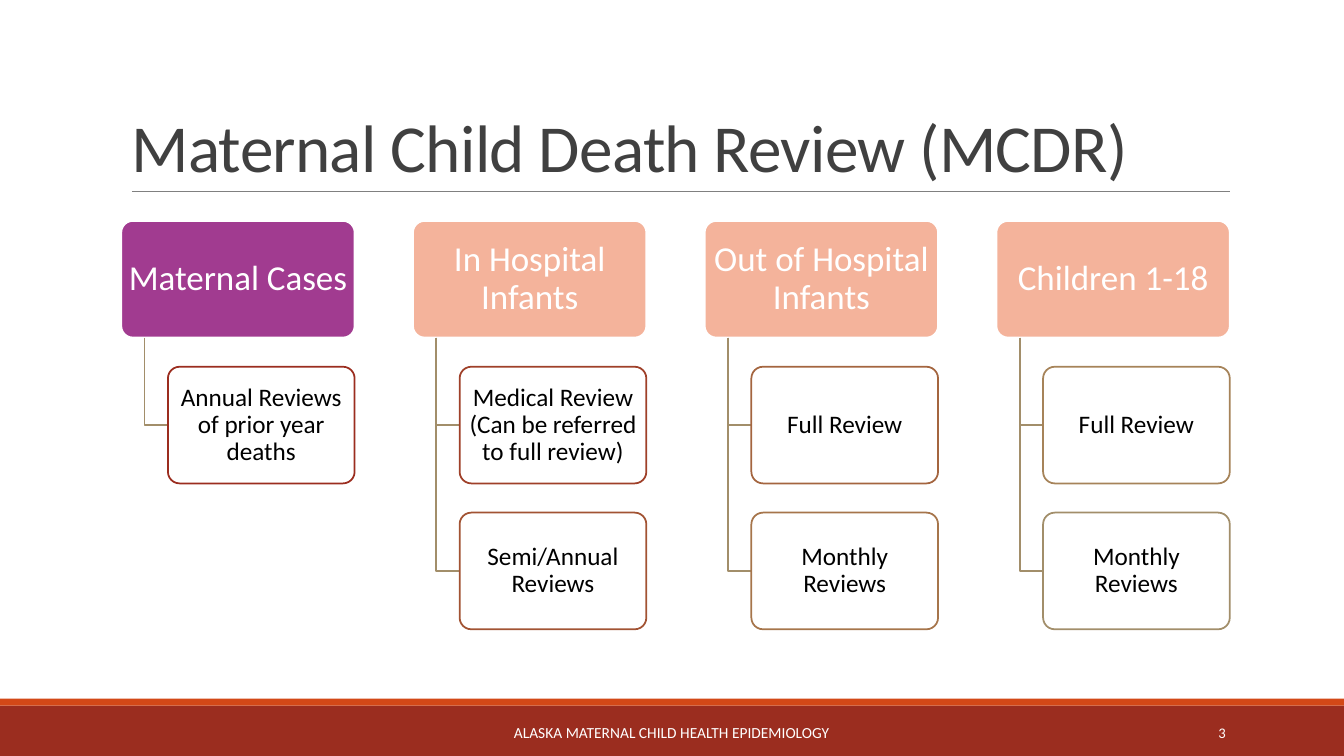
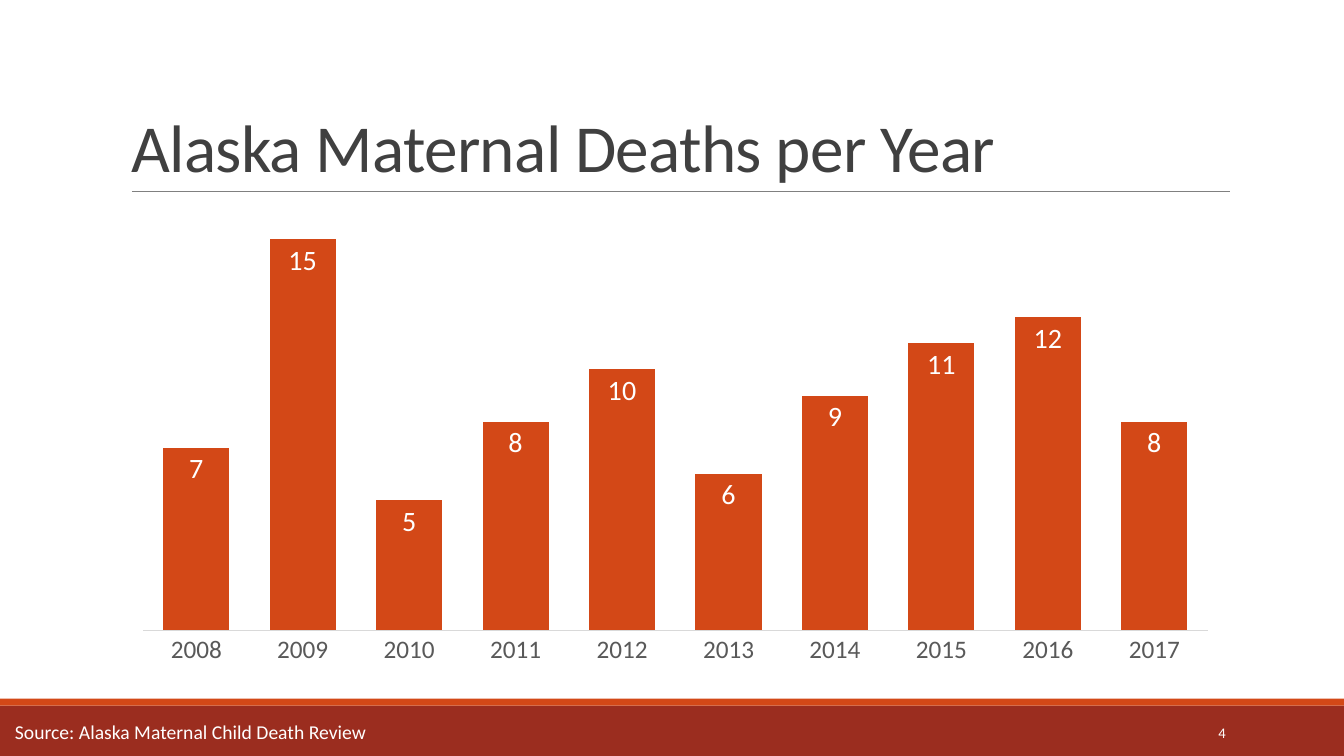
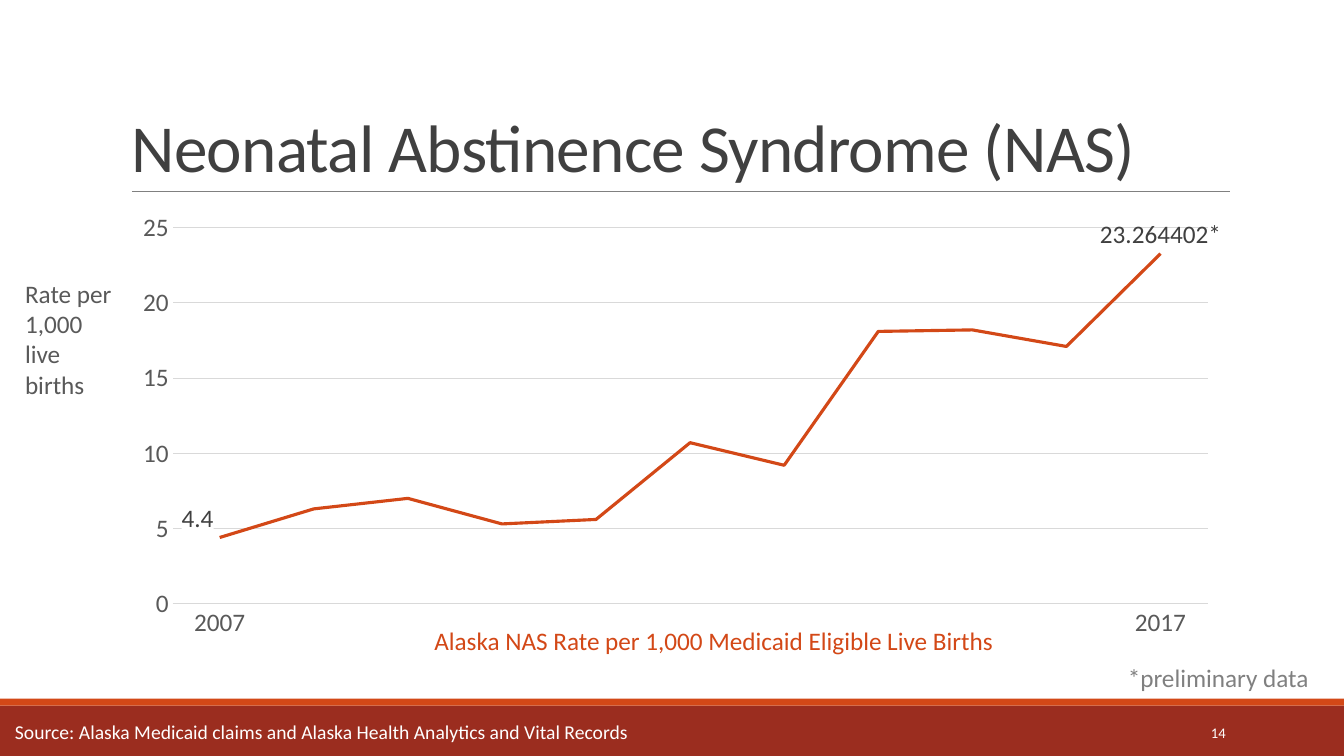
from lxml import etree
from pptx import Presentation
from pptx.chart.data import CategoryChartData
from pptx.dml.color import RGBColor
from pptx.enum.chart import XL_CHART_TYPE, XL_LABEL_POSITION, XL_MARKER_STYLE, XL_TICK_MARK
from pptx.enum.shapes import MSO_CONNECTOR, MSO_SHAPE
from pptx.enum.text import MSO_ANCHOR, PP_ALIGN
from pptx.oxml import parse_xml
from pptx.oxml.ns import nsdecls, qn
from pptx.util import Pt

FONT = "Calibri"
WHITE = RGBColor(0xFF, 0xFF, 0xFF)
BLACK = RGBColor(0, 0, 0)
BRICK = RGBColor(0x9B, 0x2D, 0x1F)
ORANGE = RGBColor(0xD3, 0x48, 0x17)
PURPLE = RGBColor(0xA1, 0x3B, 0x90)
PEACH = RGBColor(0xF4, 0xB3, 0x9B)
TAN = RGBColor(0xA2, 0x8E, 0x6A)
RUST = RGBColor(0x9F, 0x40, 0x29)
SIENNA = RGBColor(0xA2, 0x53, 0x33)
COPPER = RGBColor(0xA4, 0x65, 0x3F)
BRONZE = RGBColor(0xA6, 0x75, 0x4B)
OCHRE = RGBColor(0xA6, 0x83, 0x59)
CHARCOAL = RGBColor(0x40, 0x40, 0x40)
SLATE = RGBColor(0x59, 0x59, 0x59)
GREY = RGBColor(0x80, 0x80, 0x80)
PALE = RGBColor(0xD9, 0xD9, 0xD9)

RECT, ROUNDED = MSO_SHAPE.RECTANGLE, MSO_SHAPE.ROUNDED_RECTANGLE
STRAIGHT = MSO_CONNECTOR.STRAIGHT
LEFT, CENTER, RIGHT = PP_ALIGN.LEFT, PP_ALIGN.CENTER, PP_ALIGN.RIGHT
TOP, MIDDLE, BOTTOM = MSO_ANCHOR.TOP, MSO_ANCHOR.MIDDLE, MSO_ANCHOR.BOTTOM
COLUMNS, LINE = XL_CHART_TYPE.COLUMN_CLUSTERED, XL_CHART_TYPE.LINE
INSIDE_END, ABOVE = XL_LABEL_POSITION.INSIDE_END, XL_LABEL_POSITION.ABOVE
NO_TICK, NO_MARKER = XL_TICK_MARK.NONE, XL_MARKER_STYLE.NONE

REVIEWS = [
    ("Maternal Cases", PURPLE, [("Annual Reviews of prior year deaths", BRICK)]),
    ("In Hospital Infants", PEACH, [
        ("Medical Review (Can be referred to full review)", RUST),
        ("Semi/Annual Reviews", SIENNA)]),
    ("Out of Hospital Infants", PEACH, [
        ("Full Review", COPPER), ("Monthly Reviews", BRONZE)]),
    ("Children 1-18", PEACH, [("Full Review", OCHRE), ("Monthly Reviews", TAN)]),
]
DEATHS = [7, 15, 5, 8, 10, 6, 9, 11, 12, 8]
NAS_RATES = [4.4, 6.3, 7.0, 5.3, 5.6, 10.7, 9.2, 18.1, 18.2, 17.1, 23.264402]


def style_font(font, size, color):
    """Set the deck font with a size and colour."""
    font.name = FONT
    font.size = Pt(size)
    font.color.rgb = color


def write(frame, text, size, color, align=LEFT, anchor=TOP, spacing=1.0):
    """Write one paragraph into a text frame and return its run."""
    frame.text = text
    frame.vertical_anchor = anchor
    paragraph = frame.paragraphs[0]
    paragraph.alignment = align
    paragraph.line_spacing = spacing
    run = paragraph.runs[0]
    style_font(run.font, size, color)
    return run


def add_text(slide, box, text, size, color, wrap=True, **layout):
    """Add a text box at (left, top, width, height) and return its run."""
    frame = slide.shapes.add_textbox(*map(Pt, box)).text_frame
    frame.word_wrap = wrap
    return write(frame, text, size, color, **layout)


def add_block(slide, kind, box, fill, outline=None):
    """Add a filled shape, outlined only if a colour is given."""
    block = slide.shapes.add_shape(kind, *map(Pt, box))
    block.shadow.inherit = False
    block.fill.solid()
    block.fill.fore_color.rgb = fill
    if outline is None:
        block.line.fill.background()
    else:
        block.line.color.rgb = outline
        block.line.width = Pt(1.25)
    return block


def add_framed_slide(deck, title, number):
    """Add a slide with the shared bands, title, rule and page number."""
    slide = deck.slides.add_slide(deck.slide_layouts[6])
    add_block(slide, RECT, (0, 504, 960, 36), BRICK)
    add_block(slide, RECT, (0, 499, 960, 5), ORANGE)
    rule = slide.shapes.add_connector(STRAIGHT, Pt(94.3), Pt(136.8), Pt(878.6), Pt(136.8))
    rule.line.color.rgb = GREY
    rule.line.width = Pt(0.5)
    etree.SubElement(rule._element.spPr, qn("a:effectLst"))
    heading = add_text(slide, (86.8, 22.6, 792, 114.2), title, 48, CHARCOAL,
                       anchor=BOTTOM, spacing=0.85)
    heading.font._element.set("spc", "-50")
    add_text(slide, (779.6, 508.8, 103, 28.8), str(number), 10.5, WHITE,
             align=RIGHT, anchor=MIDDLE)
    return slide


def add_source(slide, text, width):
    """Put the data source at the left of the bottom band."""
    add_text(slide, (3.6, 511, width, 24.2), text, 14, WHITE, wrap=False)


def add_card(slide, box, text, size, color, fill, outline):
    """Add a rounded card with centred text."""
    card = add_block(slide, ROUNDED, box, fill, outline)
    card.adjustments[0] = 0.1
    frame = card.text_frame
    frame.word_wrap = True
    frame.margin_left = frame.margin_right = Pt(2.5)
    frame.margin_top = frame.margin_bottom = Pt(2.5)
    write(frame, text, size, color, CENTER, MIDDLE, 0.9)


def add_branch(slide, left, top, right, bottom):
    """Draw an open elbow down and then right."""
    builder = slide.shapes.build_freeform(Pt(left), Pt(top))
    builder.add_line_segments([(Pt(left), Pt(bottom)), (Pt(right), Pt(bottom))], close=False)
    branch = builder.convert_to_shape()
    branch.shadow.inherit = False
    branch.fill.background()
    branch.line.color.rgb = TAN
    branch.line.width = Pt(1.25)


def add_review_column(slide, left, top, width, heading, fill, steps):
    """Add a heading card with its review steps hanging below it."""
    height = width / 2
    add_card(slide, (left, top, width, height), heading, 25, WHITE, fill, WHITE)
    step_left = left + 0.2 * width
    for row, (step, outline) in enumerate(steps, 1):
        step_top = top + 1.25 * height * row
        add_branch(slide, left + 0.1 * width, top + height, step_left, step_top + height / 2)
        add_card(slide, (step_left, step_top, 0.8 * width, height),
                 step, 18, BLACK, WHITE, outline)


def add_plain_chart(slide, box, kind, categories, values, size):
    """Add a one-series chart with a plain category axis."""
    data = CategoryChartData()
    data.categories = categories
    data.add_series("Series 1", values)
    chart = slide.shapes.add_chart(kind, *map(Pt, box), data).chart
    chart.has_title = False
    chart.has_legend = False
    style_font(chart.font, size, BLACK)
    chart.plots[0].vary_by_categories = False
    axis = chart.category_axis
    axis.major_tick_mark = NO_TICK
    axis.format.line.color.rgb = PALE
    axis.format.line.width = Pt(0.75)
    style_font(axis.tick_labels.font, 18, SLATE)
    chart.value_axis.minimum_scale = 0
    return chart


def add_deaths_chart(slide, box):
    """Add the columns of deaths per year."""
    years = [str(year) for year in range(2008, 2018)]
    chart = add_plain_chart(slide, box, COLUMNS, years, DEATHS, 10)
    chart.value_axis.visible = False
    chart.value_axis.has_major_gridlines = False
    chart.value_axis.maximum_scale = 16
    plot = chart.plots[0]
    plot.gap_width = 61
    plot.overlap = -1
    deaths = plot.series[0]
    deaths.format.fill.solid()
    deaths.format.fill.fore_color.rgb = ORANGE
    labels = deaths.data_labels
    labels.show_value = True
    labels.position = INSIDE_END
    style_font(labels.font, 20, WHITE)


def label_ends(rates):
    """Label only the first and last points of the rate line."""
    rates.data_labels.show_value = False
    last = rates.points[len(NAS_RATES) - 1].data_label
    write(last.text_frame, "23.264402*", 18, CHARCOAL, CENTER)
    last.position = ABOVE
    first = rates.points[0].data_label
    style_font(first.font, 18, CHARCOAL)
    first.position = ABOVE
    label = rates.data_labels._element.find(qn("c:dLbl"))
    label.find(qn("c:idx")).addnext(parse_xml(
        f'<c:layout {nsdecls("c")}><c:manualLayout><c:x val="-0.02"/>'
        '<c:y val="0"/></c:manualLayout></c:layout>'))
    for old_fill in label.findall(qn("c:spPr")):
        label.remove(old_fill)
    label.find(qn("c:txPr")).addprevious(parse_xml(
        f'<c:spPr {nsdecls("c", "a")}><a:solidFill><a:srgbClr val="{WHITE}"/>'
        '</a:solidFill></c:spPr>'))


def add_rate_chart(slide, box):
    """Add the line of abstinence syndrome rates."""
    years = ["2007"] + [""] * (len(NAS_RATES) - 2) + ["2017"]
    chart = add_plain_chart(slide, box, LINE, years, NAS_RATES, 18)
    axis = chart.value_axis
    axis.maximum_scale = 25
    axis.major_unit = 5
    axis.major_tick_mark = NO_TICK
    axis.format.line.fill.background()
    axis.major_gridlines.format.line.color.rgb = PALE
    axis.major_gridlines.format.line.width = Pt(0.75)
    axis.tick_labels.number_format = "0"
    axis.tick_labels.number_format_is_linked = False
    style_font(axis.tick_labels.font, 18, SLATE)
    rates = chart.plots[0].series[0]
    rates.smooth = False
    rates.marker.style = NO_MARKER
    rates.format.line.color.rgb = ORANGE
    rates.format.line.width = Pt(2.25)
    label_ends(rates)


def build_review_slide(deck):
    """Build the overview of review groups."""
    slide = add_framed_slide(deck, "Maternal Child Death Review (MCDR)", 3)
    width = 166.7
    for column, review in enumerate(REVIEWS):
        add_review_column(slide, 86.6 + 1.25 * width * column, 157.8, width, *review)
    add_text(slide, (290.2, 508.5, 379.4, 28.8), "ALASKA MATERNAL CHILD HEALTH EPIDEMIOLOGY",
             11, WHITE, align=CENTER, anchor=MIDDLE)


def build_deaths_slide(deck):
    """Build the slide of maternal deaths per year."""
    slide = add_framed_slide(deck, "Alaska Maternal Deaths per Year", 4)
    add_deaths_chart(slide, (86.4, 145.4, 792, 336.2))
    add_source(slide, "Source: Alaska Maternal Child Death Review", 267.8)


def build_rate_slide(deck):
    """Build the slide of neonatal abstinence syndrome rates."""
    slide = add_framed_slide(deck, "Neonatal Abstinence Syndrome (NAS)", 14)
    add_rate_chart(slide, (86.4, 145.4, 792, 316.8))
    add_text(slide, (10.8, 195.1, 82, 94.3), "Rate per 1,000 live births", 18, SLATE)
    add_text(slide, (303.1, 442.8, 418.3, 29), "Alaska NAS Rate per 1,000 Medicaid Eligible Live Births",
             18, ORANGE, wrap=False)
    add_text(slide, (798.5, 469.4, 145.4, 29), "*preliminary data", 18, GREY, wrap=False)
    add_source(slide, "Source: Alaska Medicaid claims and Alaska Health Analytics and Vital Records", 457.2)


def main():
    """Build and save the deck."""
    deck = Presentation()
    deck.slide_width, deck.slide_height = Pt(960), Pt(540)
    build_review_slide(deck)
    build_deaths_slide(deck)
    build_rate_slide(deck)
    deck.save("out.pptx")


if __name__ == "__main__":
    main()
